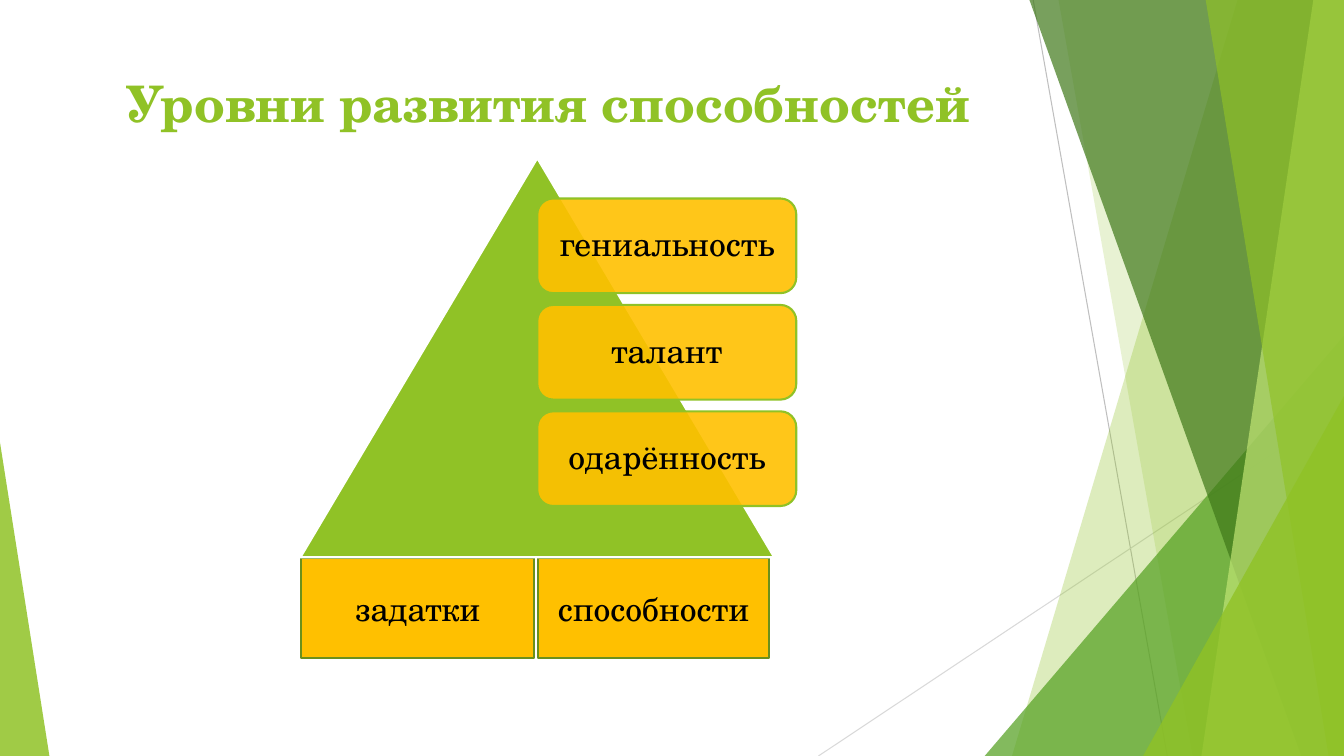
"""Build the slide on levels of ability development."""
from dataclasses import dataclass

from lxml.etree import SubElement
from pptx import Presentation
from pptx.dml.color import RGBColor
from pptx.enum.shapes import MSO_CONNECTOR as Connector, MSO_SHAPE as Preset
from pptx.enum.text import MSO_ANCHOR as Anchor, PP_ALIGN as Align
from pptx.oxml.ns import qn
from pptx.shapes.autoshape import Shape
from pptx.util import Pt

WIDTH, HEIGHT = 960, 540
BLEED_TOP = -0.72
GREEN, AMBER, OLIVE, WHITE = "90C226", "FFC000", "6B901C", "FFFFFF"
LABEL_FONT = {"name": "TeX Gyre Schola", "size": Pt(24), "bold": False}
TITLE_FONT = LABEL_FONT | {"size": Pt(36), "bold": True}


@dataclass(frozen=True)
class Ray:
    start: tuple[float, float]
    end: tuple[float, float]
    color: str


@dataclass(frozen=True)
class Facet:
    top_x: float
    bottom_x: float
    color: str
    opacity: int


@dataclass(frozen=True)
class Block:
    preset: Preset
    left: float
    top: float
    width: float
    height: float
    color: str
    opacity: int = 100
    border: str | None = None
    label: str = ""
    apex: float | None = None
    line_spacing: float = 1.0


def rgb(color: str) -> RGBColor:
    return RGBColor.from_string(color)


def paint(shape: Shape, color: str, opacity: int = 100, border: str | None = None) -> None:
    shape.shadow.inherit = False
    shape.fill.solid()
    shape.fill.fore_color.rgb = rgb(color)
    if opacity < 100:
        fill_color = shape.fill._xPr.find(qn("a:solidFill"))[0]
        SubElement(fill_color, qn("a:alpha")).set("val", str(opacity * 1000))
    if border:
        shape.line.color.rgb = rgb(border)
        shape.line.width = Pt(1.5)
    else:
        shape.line.fill.background()


def write(shape: Shape, text: str, font_format: dict, color: str,
          anchor: Anchor, line_spacing: float = 1.0) -> None:
    frame = shape.text_frame
    for name, value in {"word_wrap": True, "vertical_anchor": anchor}.items():
        setattr(frame, name, value)
    paragraph = frame.paragraphs[0]
    for name, value in {"alignment": Align.CENTER, "line_spacing": line_spacing}.items():
        setattr(paragraph, name, value)
    run = paragraph.add_run()
    run.text = text
    for name, value in font_format.items():
        setattr(run.font, name, value)
    run.font.color.rgb = rgb(color)


def draw_ray(shapes, ray: Ray) -> None:
    line = shapes.add_connector(Connector.STRAIGHT, *map(Pt, ray.start + ray.end))
    line.line.color.rgb = rgb(ray.color)
    line.line.width = Pt(0.75)
    SubElement(line._element.spPr, qn("a:effectLst"))


def draw_facet(shapes, facet: Facet) -> None:
    outline = shapes.build_freeform(Pt(facet.top_x), Pt(BLEED_TOP))
    corners = [(WIDTH, BLEED_TOP), (WIDTH, HEIGHT), (facet.bottom_x, HEIGHT)]
    outline.add_line_segments([(Pt(x), Pt(y)) for x, y in corners], close=True)
    paint(outline.convert_to_shape(), facet.color, facet.opacity)


def draw_block(shapes, block: Block) -> None:
    bounds = map(Pt, (block.left, block.top, block.width, block.height))
    shape = shapes.add_shape(block.preset, *bounds)
    if block.apex is not None:
        shape.adjustments[0] = block.apex
    paint(shape, block.color, block.opacity, block.border)
    if block.label:
        write(shape, block.label, LABEL_FONT, "000000", Anchor.MIDDLE, block.line_spacing)


RAYS = [
    Ray((738, 0), (833.8, HEIGHT), "BFBFBF"),
    Ray((WIDTH, 290.2), (584.6, HEIGHT), "D9D9D9"),
]
BACKDROP = [
    Facet(884.2, 722.9, GREEN, 30),
    Facet(756, 851.8, GREEN, 20),
    Block(Preset.ISOSCELES_TRIANGLE, 703.4, 239.8, 256.6, 300.2, "54A021", 72, apex=1),
    Facet(735.1, 929.5, "3F7819", 70),
    Facet(938.2, 858.2, "C0E474", 70),
    Facet(861.1, 949, GREEN, 65),
    Block(Preset.ISOSCELES_TRIANGLE, 816.5, 283, 143.5, 257, GREEN, 80, apex=1),
    Block(Preset.ISOSCELES_TRIANGLE, 0, 316.1, 35.3, 223.9, GREEN, 85, apex=0),
]
FOUNDATION = [
    Block(Preset.RECTANGLE, left, 398.2, width, 72, AMBER, border=OLIVE, label=label)
    for left, width, label in [(215.3, 166.3, "задатки"), (384.5, 164.6, "способности")]
]
PYRAMID = Block(Preset.ISOSCELES_TRIANGLE, 214.6, 113, 338.4, 285.1, GREEN, border=WHITE)
LEVELS = [
    Block(Preset.ROUNDED_RECTANGLE, 383.8, 141.8 + 76 * step, 185, 67.6, AMBER, 90,
          GREEN, label, line_spacing=0.9)
    for step, label in enumerate(["гениальность", "талант", "одарённость"])
]


def main() -> None:
    deck = Presentation()
    deck.slide_width, deck.slide_height = Pt(WIDTH), Pt(HEIGHT)
    shapes = deck.slides.add_slide(deck.slide_layouts[6]).shapes
    for ray in RAYS:
        draw_ray(shapes, ray)
    for part in BACKDROP:
        draw = draw_facet if isinstance(part, Facet) else draw_block
        draw(shapes, part)
    title = shapes.add_textbox(*map(Pt, (53.3, 48.2, 676.8, 103.7)))
    write(title, "Уровни развития способностей", TITLE_FONT, GREEN, Anchor.TOP)
    for block in [*FOUNDATION, PYRAMID, *LEVELS]:
        draw_block(shapes, block)
    deck.save("out.pptx")


if __name__ == "__main__":
    main()
